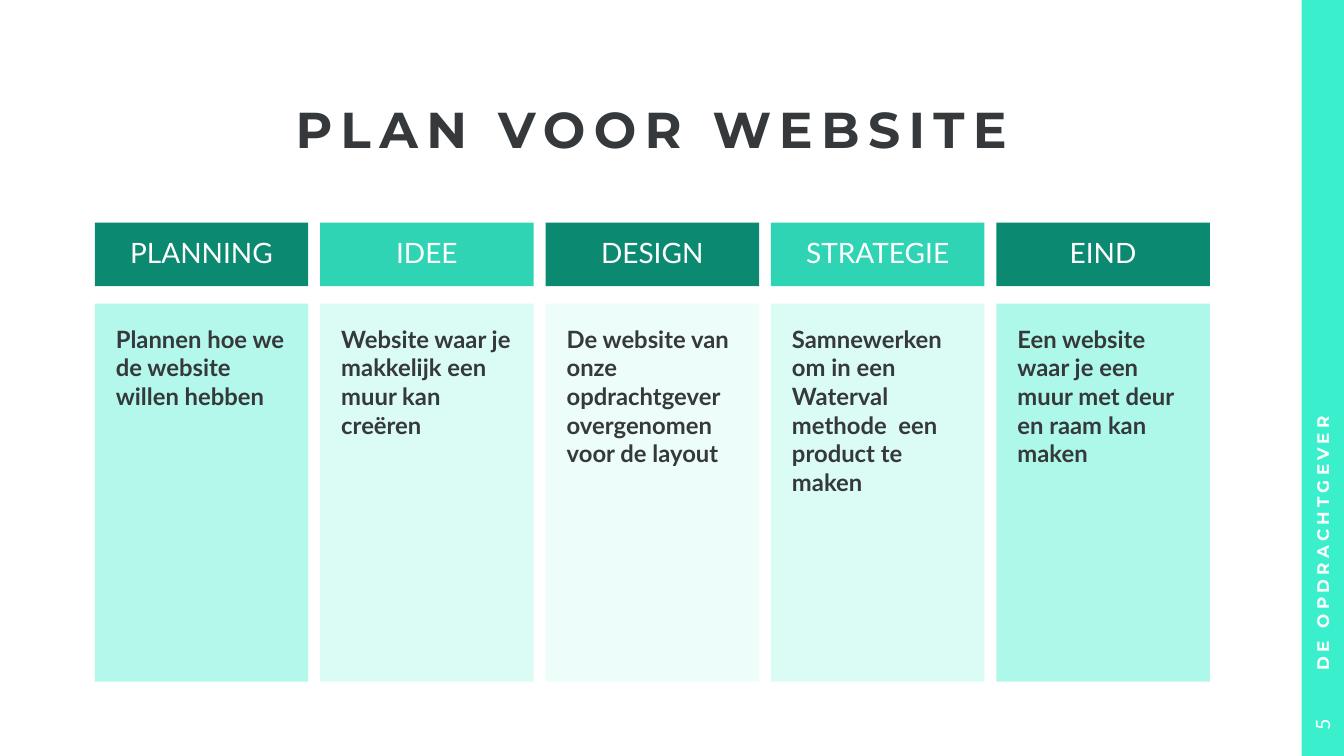
"""Build the website plan slide: five stages with a header and a note each."""
from dataclasses import dataclass

from lxml.etree import SubElement
from pptx import Presentation
from pptx.dml.color import RGBColor
from pptx.enum.shapes import MSO_SHAPE
from pptx.enum.text import MSO_ANCHOR, MSO_AUTO_SIZE, PP_ALIGN
from pptx.oxml.ns import qn
from pptx.shapes.autoshape import Shape
from pptx.slide import Slide
from pptx.util import Cm, Pt

RECT = MSO_SHAPE.RECTANGLE
TOP, MIDDLE = MSO_ANCHOR.TOP, MSO_ANCHOR.MIDDLE
LEFT, CENTER = PP_ALIGN.LEFT, PP_ALIGN.CENTER
NO_FIT = MSO_AUTO_SIZE.NONE

COLORS = {
    "dark": "0B8971",
    "teal": "11CEA9",
    "mint": "89F5E0",
    "pale": "B0F9EB",
    "ice": "D8FCF5",
    "bar": "3AEFCC",
    "ink": "36393B",
    "white": "FFFFFF",
}


@dataclass(frozen=True)
class Box:
    left: float
    top: float
    width: float
    height: float


@dataclass(frozen=True)
class Tint:
    color: str
    alpha: int = 100


@dataclass(frozen=True)
class Style:
    font: str
    size: int
    color: str
    bold: bool = False
    align: PP_ALIGN = LEFT
    anchor: MSO_ANCHOR = MIDDLE
    inset: tuple[float, float, float, float] = (0, 0, 0, 0)
    leading: float = 1.0
    spacing: int = 0


@dataclass(frozen=True)
class Stage:
    name: str
    note: str
    head: Tint
    body: Tint


DARK, TEAL, PALE = Tint("dark"), Tint("teal", 87), Tint("pale", 45)
STAGES = [
    Stage("PLANNING", "Plannen hoe we de website willen hebben",
          DARK, Tint("mint", 64)),
    Stage("IDEE", "Website waar je makkelijk een muur kan creëren",
          TEAL, PALE),
    Stage("DESIGN",
          "De website van onze opdrachtgever overgenomen voor de layout",
          DARK, Tint("ice", 44)),
    Stage("STRATEGIE",
          "Samnewerken om in een Waterval methode  een product te maken",
          TEAL, PALE),
    Stage("EIND", "Een website waar je een muur met deur en raam kan maken",
          DARK, Tint("mint", 68)),
]

TITLE = Style("Montserrat", 36, "ink", True, CENTER, leading=0.9, spacing=6)
HEAD = Style("Lato", 20, "white", align=CENTER, inset=(0.43,) * 4, leading=0.9)
NOTE = Style("Lato", 17, "ink", True, anchor=TOP, inset=(0.53,) * 4)
BRAND = Style("Montserrat", 12, "white", True,
              inset=(0.58, 0.13, 0.25, 0.13), spacing=3)
NUMBER = Style("Lato", 14, "white", align=CENTER,
               inset=(0.25, 0.13, 0.25, 0.13))

START, STEP, WIDTH = 2.39, 5.68, 5.38


def place(shape: Shape, box: Box) -> None:
    """Move and size a shape."""
    shape.left, shape.top = Cm(box.left), Cm(box.top)
    shape.width, shape.height = Cm(box.width), Cm(box.height)


def write(shape: Shape, text: str, style: Style) -> None:
    """Put one styled run of text in a shape."""
    frame = shape.text_frame
    frame.word_wrap, frame.auto_size = True, NO_FIT
    frame.vertical_anchor = style.anchor
    (frame.margin_left, frame.margin_top,
     frame.margin_right, frame.margin_bottom) = map(Cm, style.inset)
    line = frame.paragraphs[0]
    line.alignment, line.line_spacing = style.align, style.leading
    run = line.add_run()
    run.text = text
    font = run.font
    font.name, font.size, font.bold = style.font, Pt(style.size), style.bold
    font.color.rgb = RGBColor.from_string(COLORS[style.color])
    if style.spacing:
        run.font._element.set("spc", str(style.spacing * 100))


def panel(slide: Slide, box: Box, tint: Tint) -> Shape:
    """Draw a filled box without outline or shadow."""
    shape = slide.shapes.add_shape(RECT, 0, 0, 0, 0)
    place(shape, box)
    shape.shadow.inherit = False
    shape.line.fill.background()
    shape.fill.solid()
    shape.fill.fore_color.rgb = RGBColor.from_string(COLORS[tint.color])
    if tint.alpha < 100:
        color = shape.element.find(".//" + qn("a:srgbClr"))
        SubElement(color, qn("a:alpha")).set("val", str(tint.alpha * 1000))
    return shape


def label(slide: Slide, box: Box, text: str, style: Style) -> None:
    """Add a text box that reads upward."""
    shape = slide.shapes.add_textbox(0, 0, 0, 0)
    place(shape, box)
    shape.rotation = 270
    write(shape, text, style)


def main() -> None:
    """Build and save the deck."""
    deck = Presentation()
    deck.slide_width, deck.slide_height = Cm(33.87), Cm(19.05)
    slide = deck.slides.add_slide(deck.slide_layouts[5])
    title = slide.shapes.title
    place(title, Box(2.36, 2.44, 28.12, 1.8))
    write(title, "PLAN VOOR WEBSITE", TITLE)
    panel(slide, Box(32.8, 0, 1.07, 19.05), Tint("bar"))
    for index, stage in enumerate(STAGES):
        left = START + index * STEP
        head = panel(slide, Box(left, 5.61, WIDTH, 1.6), stage.head)
        write(head, stage.name, HEAD)
        body = panel(slide, Box(left, 7.65, WIDTH, 9.53), stage.body)
        write(body, stage.note, NOTE)
    label(slide, Box(24.59, 8.2, 17.48, 1.07), "DE OPDRACHTGEVER", BRAND)
    label(slide, Box(32.54, 17.73, 1.57, 1.07), "5", NUMBER)
    deck.save("out.pptx")


if __name__ == "__main__":
    main()
